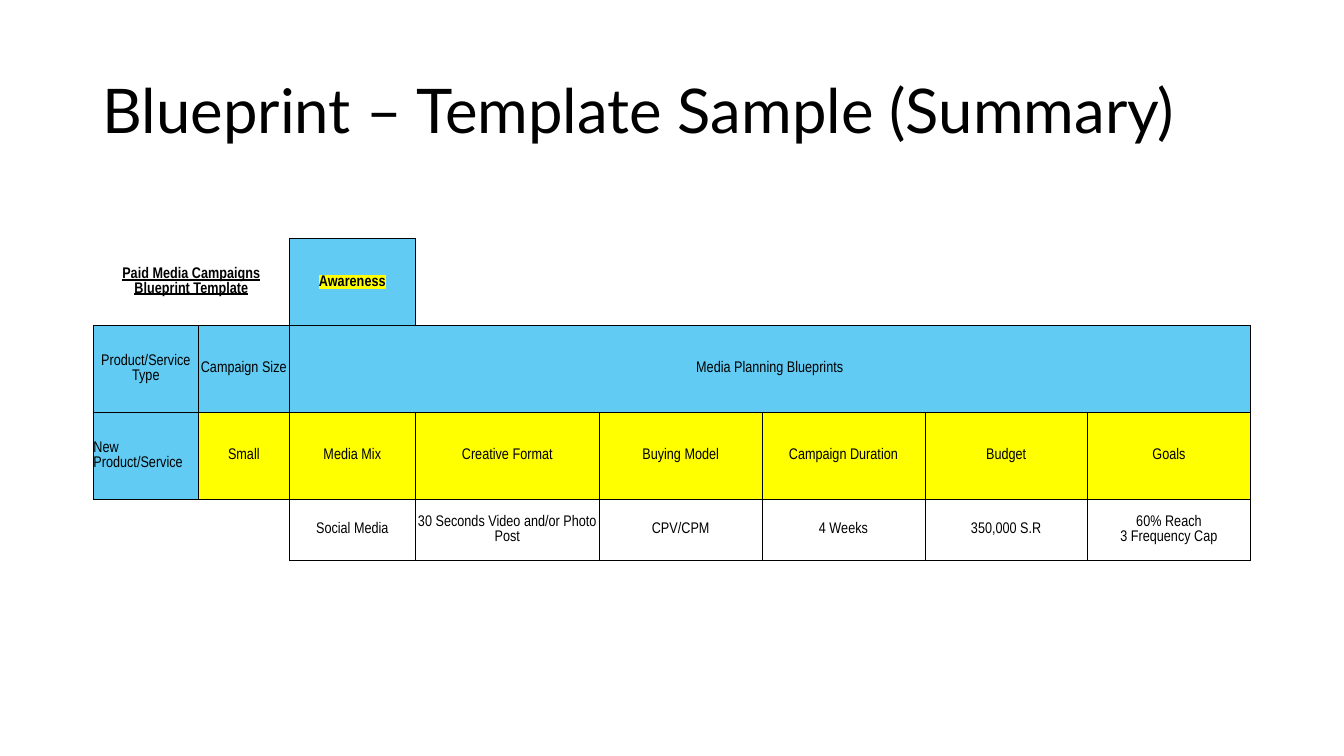
from lxml import etree
from pptx import Presentation
from pptx.dml.color import RGBColor
from pptx.enum.text import MSO_ANCHOR, MSO_AUTO_SIZE, PP_ALIGN
from pptx.oxml.ns import qn
from pptx.util import Inches, Pt

BLACK = RGBColor(0x00, 0x00, 0x00)
BLUE = RGBColor(0x61, 0xCB, 0xF3)
YELLOW = RGBColor(0xFF, 0xFF, 0x00)
LEFT, CENTER = PP_ALIGN.LEFT, PP_ALIGN.CENTER
MIDDLE = MSO_ANCHOR.MIDDLE
NO_FIT = MSO_AUTO_SIZE.NONE
PLAIN_TABLE = "{2D5ABB26-0587-4C30-8999-92F81FD0307C}"
SIDES = {"a:lnL": (0, -1), "a:lnR": (0, 1), "a:lnT": (-1, 0), "a:lnB": (1, 0)}

COLUMNS = [7.81, 6.77, 9.38, 13.69] + [12.11] * 4
ROWS = [11.5] * 3 + [8.1]
HEADINGS = ["Media Mix", "Creative Format", "Buying Model",
            "Campaign Duration", "Budget", "Goals"]
VALUES = ["Social Media", "30 Seconds Video and/or Photo Post", "CPV/CPM",
          "4 Weeks", "350,000 S.R", "60% Reach\n3 Frequency Cap"]


class Deck:
    def __init__(self, prs, title_font, table_font):
        self.prs = prs
        self.title_font = title_font
        self.table_font = table_font
        self.slide = prs.slides.add_slide(prs.slide_layouts[5])

    def x(self, percent):
        return round(self.prs.slide_width * percent / 100)

    def y(self, percent):
        return round(self.prs.slide_height * percent / 100)

    def run(self, p, text, font, size, bold=False, underline=False, highlight=None):
        r = p.add_run()
        r.text = text
        f = r.font
        f.name, f.size, f.bold, f.underline = font, Pt(size), bold, underline
        f.color.rgb = BLACK
        if highlight is not None:
            mark = etree.Element(qn("a:highlight"))
            etree.SubElement(mark, qn("a:srgbClr"), val=str(highlight))
            r._r.get_or_add_rPr().find(qn("a:solidFill")).addnext(mark)

    def title(self, text, left, top, width, height):
        sp = self.slide.shapes.title
        sp.left, sp.top = self.x(left), self.y(top)
        sp.width, sp.height = self.x(width), self.y(height)
        tf = sp.text_frame
        tf.word_wrap, tf.auto_size, tf.vertical_anchor = True, NO_FIT, MIDDLE
        p = tf.paragraphs[0]
        p.alignment, p.line_spacing = LEFT, 0.9
        self.run(p, text, self.title_font, 44)

    def table(self, left, top, columns, rows):
        frame = self.slide.shapes.add_table(
            len(rows), len(columns), self.x(left), self.y(top),
            self.x(sum(columns)), self.y(sum(rows)))
        table = frame.table
        table.first_row = table.horz_banding = False
        table._tbl.tblPr.find(qn("a:tableStyleId")).text = PLAIN_TABLE
        for column, width in zip(table.columns, columns):
            column.width = self.x(width)
        for row, height in zip(table.rows, rows):
            row.height = self.y(height)
        return table

    def borders(self, table, boxed):
        for i, row in enumerate(table.rows):
            for j, cell in enumerate(row.cells):
                tcPr = cell._tc.get_or_add_tcPr()
                for at, (tag, (di, dj)) in enumerate(SIDES.items()):
                    if boxed & {(i, j), (i + di, j + dj)}:
                        ln = etree.Element(qn(tag), w=str(Pt(0.5)))
                        fill = etree.SubElement(ln, qn("a:solidFill"))
                        etree.SubElement(fill, qn("a:srgbClr"), val=str(BLACK))
                    else:
                        ln = etree.Element(qn(tag), w="0")
                        etree.SubElement(ln, qn("a:noFill"))
                    tcPr.insert(at, ln)

    def cell(self, cell, text="", fill=None, align=CENTER, **style):
        cell.margin_left = cell.margin_right = 0
        cell.margin_top = cell.margin_bottom = 0
        cell.vertical_anchor = MIDDLE
        if fill is None:
            cell.fill.background()
        else:
            cell.fill.solid()
            cell.fill.fore_color.rgb = fill
        style.setdefault("highlight", fill)
        tf = cell.text_frame
        for i, line in enumerate(text.split("\n") if text else []):
            p = tf.add_paragraph() if i else tf.paragraphs[0]
            p.alignment = align
            self.run(p, line, self.table_font, 11, **style)


def main():
    prs = Presentation()
    prs.slide_width, prs.slide_height = Inches(13.33), Inches(7.5)
    deck = Deck(prs, "Lato", "Arial Narrow")
    deck.title("Blueprint – Template Sample (Summary)", 6.88, 5.33, 86.25, 19.33)

    table = deck.table(6.95, 31.55, COLUMNS, ROWS)
    at = table.cell
    at(0, 0).merge(at(0, 1))
    at(1, 2).merge(at(1, 7))
    for row in table.rows:
        for cell in row.cells:
            deck.cell(cell)

    deck.cell(at(0, 0), "Paid Media Campaigns Blueprint Template",
              bold=True, underline=True)
    deck.cell(at(0, 2), "Awareness", BLUE, bold=True, highlight=YELLOW)
    for j, text in enumerate(["Product/Service Type", "Campaign Size",
                              "Media Planning Blueprints"]):
        deck.cell(at(1, j), text, BLUE)
    deck.cell(at(2, 0), "New Product/Service", BLUE, LEFT)
    for j, text in enumerate(["Small"] + HEADINGS, 1):
        deck.cell(at(2, j), text, YELLOW)
    for j, text in enumerate(VALUES, 2):
        deck.cell(at(3, j), text)

    body = {(i, j) for i in (1, 2) for j in range(len(COLUMNS))}
    values = {(3, j) for j in range(2, len(COLUMNS))}
    deck.borders(table, body | values | {(0, 2)})
    prs.save("out.pptx")


if __name__ == "__main__":
    main()
